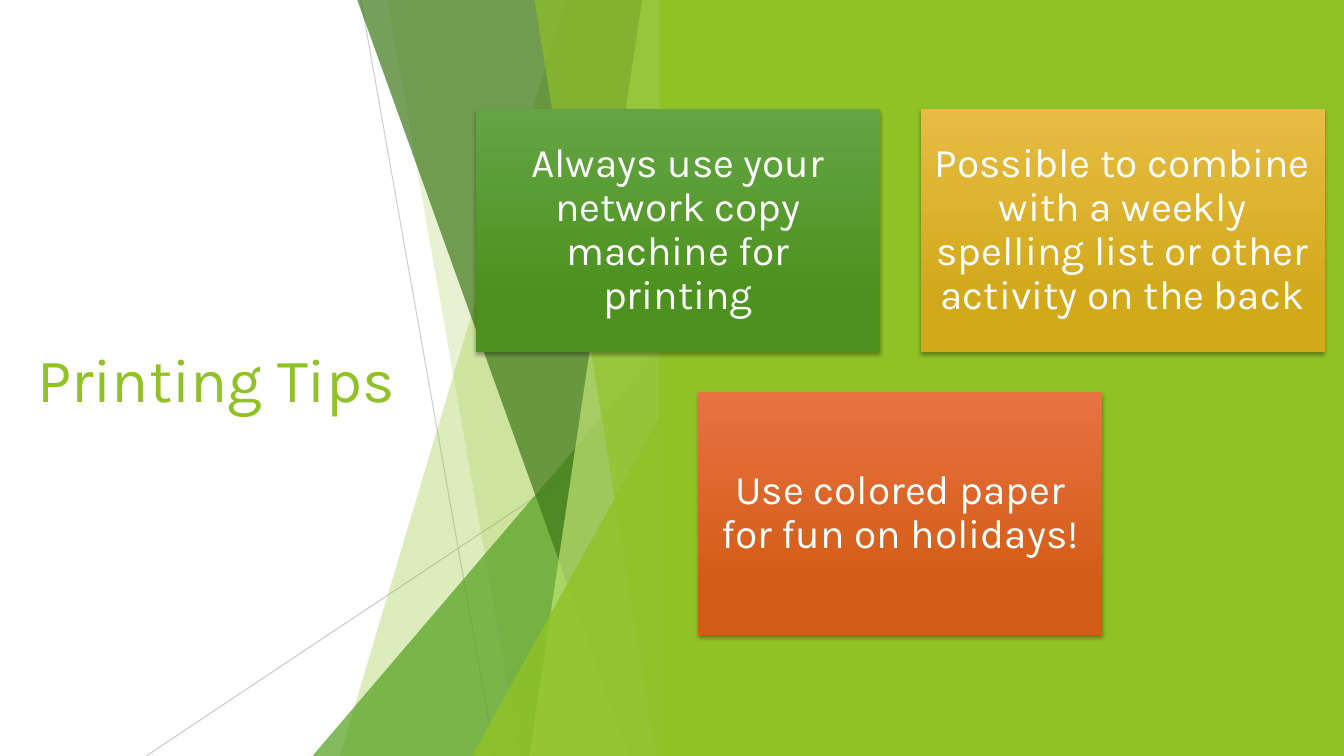
from lxml import etree
from pptx import Presentation
from pptx.dml.color import RGBColor
from pptx.enum.shapes import MSO_CONNECTOR, MSO_SHAPE
from pptx.enum.text import MSO_ANCHOR, PP_ALIGN
from pptx.oxml.ns import qn
from pptx.util import Inches, Pt

RECT = MSO_SHAPE.RECTANGLE
TRI = MSO_SHAPE.ISOSCELES_TRIANGLE
LINE = MSO_CONNECTOR.STRAIGHT
LEFT, CENTER = PP_ALIGN.LEFT, PP_ALIGN.CENTER
MIDDLE = MSO_ANCHOR.MIDDLE

WHITE = RGBColor(0xFF, 0xFF, 0xFF)
BLACK = RGBColor(0, 0, 0)
GREY = RGBColor(0xBF, 0xBF, 0xBF)
LIME = RGBColor(0x90, 0xC2, 0x26)
PALE = RGBColor(0xC0, 0xE4, 0x74)
GREEN = RGBColor(0x54, 0xA0, 0x21)
DARK = RGBColor(0x3F, 0x78, 0x19)
LEAF = RGBColor(0x63, 0xA5, 0x45), RGBColor(0x4D, 0x92, 0x1E)
GOLD = RGBColor(0xE7, 0xBC, 0x43), RGBColor(0xD2, 0xA9, 0x1B)
RUST = RGBColor(0xE8, 0x72, 0x42), RGBColor(0xD3, 0x5D, 0x16)

WIDE, HIGH = 13.33, 7.5
EDGE = 6.66  # right side of the facets
CARD_W, CARD_H = 4.01, 2.41
CARD_X, CARD_Y = 4.72, 1.08
GAP = 0.4

CARDS = [
    (0, 0, LEAF, "Always use your network copy machine for printing"),
    (1, 0, GOLD, "Possible to combine with a weekly spelling list "
                 "or other activity on the back"),
    (0.5, 1, RUST, "Use colored paper for fun on holidays!"),
]


def fade(shape, alpha):
    """Set the opacity, in percent, of the shape's colour."""
    for color in shape.element.spPr.iter(qn("a:srgbClr")):
        etree.SubElement(color, qn("a:alpha"), val=str(alpha * 1000))


class Deck:
    font = "Karla"

    def __init__(self):
        self.prs = Presentation()
        self.prs.slide_width = Inches(WIDE)
        self.prs.slide_height = Inches(HIGH)
        self.slide = self.prs.slides.add_slide(self.prs.slide_layouts[5])
        self.shapes = self.slide.shapes

    def paint(self, shape, color, alpha=100):
        shape.shadow.inherit = False
        shape.line.fill.background()
        shape.fill.solid()
        shape.fill.fore_color.rgb = color
        if alpha < 100:
            fade(shape, alpha)

    def block(self, kind, x, y, w, h):
        return self.shapes.add_shape(kind, *map(Inches, (x, y, w, h)))

    def panel(self, x, color):
        self.paint(self.block(RECT, x, 0, WIDE - x, HIGH), color)

    def facet(self, top, foot, color, alpha):
        """Draw a full-height band from a slanted left side to EDGE."""
        pen = self.shapes.build_freeform(Inches(top), Inches(-0.01))
        ends = [(EDGE, -0.01), (EDGE, HIGH), (foot, HIGH)]
        pen.add_line_segments([(Inches(x), Inches(y)) for x, y in ends])
        self.paint(pen.convert_to_shape(), color, alpha)

    def wedge(self, x, y, color, alpha):
        """Draw a right triangle that climbs to EDGE."""
        shape = self.block(TRI, x, y, EDGE - x, HIGH - y)
        shape.adjustments[0] = 1
        self.paint(shape, color, alpha)

    def ray(self, x1, y1, x2, y2, alpha):
        ray = self.shapes.add_connector(LINE, *map(Inches, (x1, y1, x2, y2)))
        ray.line.color.rgb = GREY
        ray.line.width = Pt(0.75)
        fade(ray, alpha)
        etree.SubElement(ray.element.spPr, qn("a:effectLst"))

    def label(self, shape, text, size, color, align, inset, space):
        frame = shape.text_frame
        frame.text = text
        box = {"word_wrap": True, "vertical_anchor": MIDDLE}
        for side in ("left", "right", "top", "bottom"):
            box["margin_" + side] = Inches(inset)
        para = frame.paragraphs[0]
        font = para.runs[0].font
        looks = [
            (frame, box),
            (para, {"alignment": align, "line_spacing": space}),
            (font, {"name": self.font, "size": Pt(size)}),
            (font.color, {"rgb": color}),
        ]
        for item, style in looks:
            for key, value in style.items():
                setattr(item, key, value)

    def title(self, text, x, y, w, h):
        title = self.shapes.title
        place = {"left": x, "top": y, "width": w, "height": h}
        for key, value in place.items():
            setattr(title, key, Inches(value))
        self.label(title, text, 44, LIME, LEFT, 0.1, 1.0)
        title.element.getparent().append(title.element)

    def card(self, col, row, tones, text):
        x = CARD_X + col * (CARD_W + GAP)
        y = CARD_Y + row * (CARD_H + GAP)
        card = self.block(RECT, x, y, CARD_W, CARD_H)
        self.paint(card, tones[0])
        card.fill.gradient()
        card.fill.gradient_angle = 270
        for stop, tone, pos in zip(card.fill.gradient_stops, tones, (0, 0.78)):
            stop.color.rgb = tone
            stop.position = pos
        self.shade(card)
        self.label(card, text, 29, WHITE, CENTER, 0.12, 0.9)

    def shade(self, shape):
        """Add a soft shadow below the shape."""
        effects = shape.element.spPr.find(qn("a:effectLst"))
        look = {"blurRad": Pt(3), "dist": Pt(2), "dir": 90 * 60000}
        shadow = etree.SubElement(effects, qn("a:outerShdw"), rotWithShape="0")
        for key, value in look.items():
            shadow.set(key, str(int(value)))
        color = etree.SubElement(shadow, qn("a:srgbClr"), val=str(BLACK))
        etree.SubElement(color, qn("a:alpha"), val="35000")


def main():
    deck = Deck()
    deck.ray(3.58, 0, 4.91, HIGH, 75)
    deck.ray(EDGE, 4.03, 1.45, HIGH, 80)
    deck.facet(5.61, 3.37, LIME, 30)
    deck.facet(3.84, 5.16, LIME, 20)
    deck.wedge(3.1, 3.33, GREEN, 72)
    deck.facet(3.54, 6.24, DARK, 70)
    deck.facet(6.37, 5.25, PALE, 70)
    deck.facet(5.3, 6.51, LIME, 65)
    deck.wedge(4.68, 3.93, LIME, 80)
    deck.panel(6.54, LIME)
    deck.title("Printing Tips", 0.27, 1.51, 3.83, 4.48)
    for card in CARDS:
        deck.card(*card)
    deck.prs.save("out.pptx")


if __name__ == "__main__":
    main()
